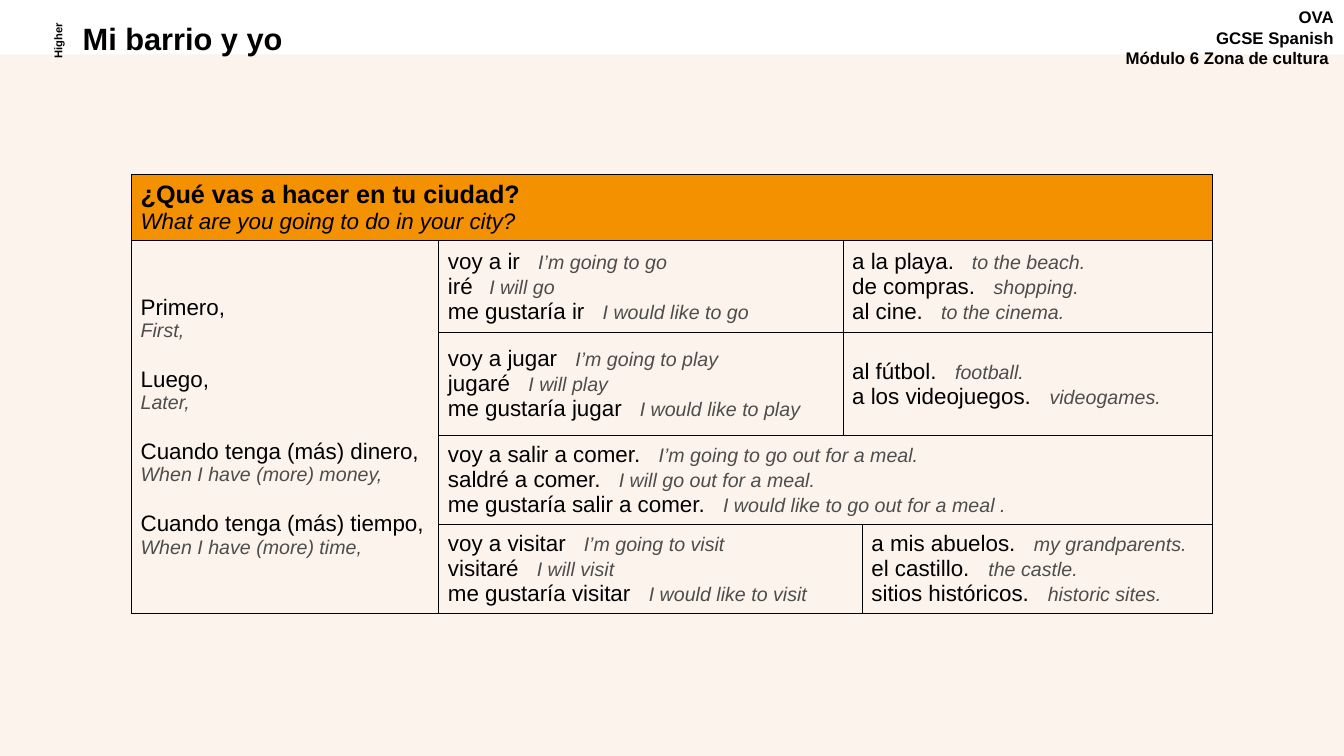
from dataclasses import dataclass

import lxml.etree
import pptx
import pptx.dml.color
import pptx.enum.shapes
import pptx.enum.text
import pptx.oxml.ns
import pptx.presentation
import pptx.slide
import pptx.table
import pptx.text.text
import pptx.util

Pt = pptx.util.Pt
Align = pptx.enum.text.PP_ALIGN
COLORS = {"black": "000000", "gray": "4D4D4C", "orange": "F39100", "cream": "FDF3ED"}
FONT = "Arial"
COLUMN_WIDTHS = [219.5, 288.75, 13.75, 250]
ROW_HEIGHTS = [46.5, 66.25, 73, 58.5, 60]


@dataclass(frozen=True)
class Label:
    lines: tuple[str, ...]
    left: float
    top: float
    width: float
    height: float
    size: float
    align: Align
    rotation: float = 0
    line_spacing: float = 1


@dataclass(frozen=True)
class Phrase:
    spanish: str
    english: str
    tab: float


@dataclass(frozen=True)
class PhraseCell:
    row: int
    column: int
    column_span: int
    phrases: tuple[Phrase, ...]


LABELS = [
    Label(("OVA", "GCSE Spanish", "Módulo 6 Zona de cultura "),
          791.25, 1.5, 168.5, 57, 12, Align.RIGHT),
    Label(("Mi barrio y yo",), 52, 13.5, 495, 31, 22, Align.LEFT, line_spacing=0.9),
    Label(("Higher",), 13, 21, 56, 16, 8, Align.CENTER, rotation=270),
]

OPENERS = [
    ("Primero,", "First,"),
    ("Luego,", "Later,"),
    ("Cuando tenga (más) dinero,", "When I have (more) money,"),
    ("Cuando tenga (más) tiempo,", "When I have (more) time,"),
]

PHRASE_CELLS = [
    PhraseCell(1, 1, 1, (
        Phrase("voy a ir", "I’m going to go", 64.5),
        Phrase("iré", "I will go", 29.5),
        Phrase("me gustaría ir", "I would like to go", 110.5))),
    PhraseCell(1, 2, 2, (
        Phrase("a la playa.", "to the beach.", 85.5),
        Phrase("de compras.", "shopping.", 101),
        Phrase("al cine.", "to the cinema.", 63.5))),
    PhraseCell(2, 1, 1, (
        Phrase("voy a jugar", "I’m going to play", 91),
        Phrase("jugaré", "I will play", 57.5),
        Phrase("me gustaría jugar", "I would like to play", 137))),
    PhraseCell(2, 2, 2, (
        Phrase("al fútbol.", "football.", 73.5),
        Phrase("a los videojuegos.", "videogames.", 141))),
    PhraseCell(3, 1, 3, (
        Phrase("voy a salir a comer.", "I’m going to go out for a meal.", 150.5),
        Phrase("saldré a comer.", "I will go out for a meal.", 122),
        Phrase("me gustaría salir a comer.", "I would like to go out for a meal .", 196.5))),
    PhraseCell(4, 1, 2, (
        Phrase("voy a visitar", "I’m going to visit", 97),
        Phrase("visitaré", "I will visit", 63.5),
        Phrase("me gustaría visitar", "I would like to visit", 143.5))),
    PhraseCell(4, 3, 1, (
        Phrase("a mis abuelos.", "my grandparents.", 116),
        Phrase("el castillo.", "the castle.", 83.5),
        Phrase("sitios históricos.", "historic sites.", 126))),
]


def rgb(name: str) -> pptx.dml.color.RGBColor:
    return pptx.dml.color.RGBColor.from_string(COLORS[name])


def format_run(run: pptx.text.text._Run, size: float, color: str = "black",
               bold: bool = False, italic: bool = False) -> None:
    font = run.font
    font.name, font.size, font.bold, font.italic = FONT, Pt(size), bold, italic
    font.color.rgb = rgb(color)


def add_label(slide: pptx.slide.Slide, label: Label) -> None:
    box = slide.shapes.add_textbox(
        Pt(label.left), Pt(label.top), Pt(label.width), Pt(label.height))
    box.rotation = label.rotation
    box.text_frame.word_wrap = True
    box.text_frame.text = "\n".join(label.lines)
    for paragraph in box.text_frame.paragraphs:
        paragraph.alignment = label.align
        paragraph.line_spacing = label.line_spacing
        format_run(paragraph.runs[0], label.size, bold=True)


def add_borders(cell: pptx.table._Cell) -> None:
    properties = cell._tc.get_or_add_tcPr()
    for side in ("a:lnL", "a:lnR", "a:lnT", "a:lnB"):
        line = lxml.etree.SubElement(
            properties, pptx.oxml.ns.qn(side), w=str(Pt(0.75)))
        fill = lxml.etree.SubElement(line, pptx.oxml.ns.qn("a:solidFill"))
        lxml.etree.SubElement(
            fill, pptx.oxml.ns.qn("a:srgbClr"), val=COLORS["black"])


def add_tab_stop(paragraph: pptx.text.text._Paragraph, position: float) -> None:
    tabs = lxml.etree.SubElement(
        paragraph._p.get_or_add_pPr(), pptx.oxml.ns.qn("a:tabLst"))
    lxml.etree.SubElement(
        tabs, pptx.oxml.ns.qn("a:tab"), pos=str(Pt(position)), algn="l")


def fill_phrases(cell: pptx.table._Cell, phrases: tuple[Phrase, ...]) -> None:
    cell.text_frame.text = "\n".join(f"{phrase.spanish}\t" for phrase in phrases)
    for paragraph, phrase in zip(cell.text_frame.paragraphs, phrases):
        add_tab_stop(paragraph, phrase.tab)
        format_run(paragraph.runs[0], 16)
        translation = paragraph.add_run()
        translation.text = phrase.english
        format_run(translation, 14, "gray", italic=True)


def fill_openers(cell: pptx.table._Cell) -> None:
    cell.text_frame.text = "\n".join(line for pair in OPENERS for line in pair)
    for index, paragraph in enumerate(cell.text_frame.paragraphs):
        if index % 2:
            format_run(paragraph.runs[0], 14, "gray", italic=True)
        else:
            format_run(paragraph.runs[0], 16)
            if index:
                paragraph.space_before = Pt(18)


def fill_question(cell: pptx.table._Cell) -> None:
    cell.text_frame.text = (
        "¿Qué vas a hacer en tu ciudad?\nWhat are you going to do in your city?")
    question, translation = cell.text_frame.paragraphs
    format_run(question.runs[0], 18, bold=True)
    format_run(translation.runs[0], 16, italic=True)
    cell.fill.solid()
    cell.fill.fore_color.rgb = rgb("orange")


def add_phrase_table(slide: pptx.slide.Slide) -> None:
    table = slide.shapes.add_table(
        len(ROW_HEIGHTS), len(COLUMN_WIDTHS), Pt(94), Pt(124.75),
        Pt(sum(COLUMN_WIDTHS)), Pt(sum(ROW_HEIGHTS))).table
    table.first_row = table.horz_banding = False
    for column, width in zip(table.columns, COLUMN_WIDTHS):
        column.width = Pt(width)
    for row, height in zip(table.rows, ROW_HEIGHTS):
        row.height = Pt(height)
    for cell in table.iter_cells():
        add_borders(cell)
        cell.fill.background()
        cell.vertical_anchor = pptx.enum.text.MSO_ANCHOR.MIDDLE
        cell.margin_left = cell.margin_right = Pt(6.5)
        cell.margin_top = cell.margin_bottom = Pt(3)
    table.cell(0, 0).merge(table.cell(0, 3))
    table.cell(1, 0).merge(table.cell(4, 0))
    fill_question(table.cell(0, 0))
    fill_openers(table.cell(1, 0))
    for entry in PHRASE_CELLS:
        cell = table.cell(entry.row, entry.column)
        if entry.column_span > 1:
            cell.merge(table.cell(entry.row, entry.column + entry.column_span - 1))
        fill_phrases(cell, entry.phrases)


def main() -> None:
    presentation = pptx.Presentation()
    presentation.slide_width, presentation.slide_height = Pt(960), Pt(540)
    slide = presentation.slides.add_slide(presentation.slide_layouts[6])
    panel = slide.shapes.add_shape(
        pptx.enum.shapes.MSO_SHAPE.RECTANGLE, Pt(0), Pt(38.75), Pt(960), Pt(501.25))
    panel.shadow.inherit = False
    panel.fill.solid()
    panel.fill.fore_color.rgb = rgb("cream")
    panel.line.fill.background()
    for label in LABELS:
        add_label(slide, label)
    add_phrase_table(slide)
    presentation.save("out.pptx")


if __name__ == "__main__":
    main()
